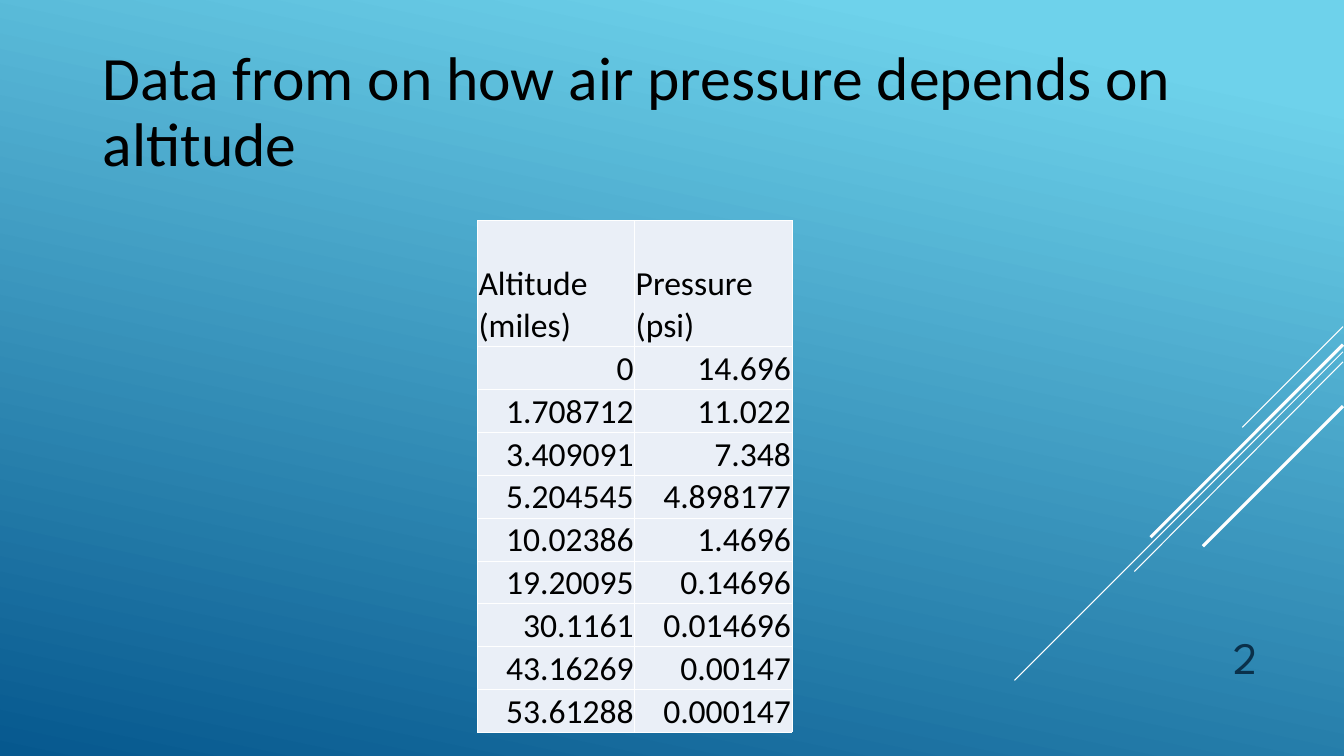
from lxml.etree import SubElement
from pptx import Presentation
from pptx.dml.color import RGBColor
from pptx.enum.shapes import MSO_CONNECTOR
from pptx.enum.text import MSO_ANCHOR, MSO_AUTO_SIZE, PP_ALIGN
from pptx.oxml.ns import qn
from pptx.util import Pt

PX = 9144  # 100 px to the inch
SKY = RGBColor(0x6E, 0xD2, 0xEB)
DEEP_BLUE = RGBColor(0x06, 0x58, 0x8E)
WHITE = RGBColor(0xFF, 0xFF, 0xFF)
BLACK = RGBColor(0x00, 0x00, 0x00)
CELL_BLUE = RGBColor(0xEA, 0xEF, 0xF7)
NAVY = RGBColor(0x0A, 0x30, 0x4A)


def format_text(p, font, size, color, align=PP_ALIGN.LEFT, spacing=None):
    p.alignment = align
    p.line_spacing = spacing
    for r in p.runs:
        r.font.name = font
        r.font.size = Pt(size)
        r.font.color.rgb = color


def add_border(tcPr, side):
    ln = SubElement(tcPr, qn(f"a:{side}"), w=str(Pt(0.45)))
    fill = SubElement(ln, qn("a:solidFill"))
    SubElement(fill, qn("a:srgbClr"), val=str(WHITE))


prs = Presentation()
prs.slide_width = 1334 * PX
prs.slide_height = 750 * PX
s = prs.slides.add_slide(prs.slide_layouts[5])

# Background gradient
fill = s.background.fill
fill.gradient()
fill.gradient_angle = 258
for stop, position, color in zip(fill.gradient_stops, (0.1, 1), (SKY, DEEP_BLUE)):
    stop.position = position
    stop.color.rgb = color

# Diagonal lines running in from the right edge
RIGHT = 1333
for y1, x2, y2, width in [
    (324, 1233, 424, 0.75),
    (349, 1007, 675, 0.75),
    (359, 1126, 567, 0.75),
    (342, 1142, 533, 2.25),
    (403, 1194, 542, 2.25),
]:
    line = s.shapes.add_connector(
        MSO_CONNECTOR.STRAIGHT, RIGHT * PX, y1 * PX, x2 * PX, y2 * PX)
    line.line.color.rgb = WHITE
    line.line.width = Pt(width)
    SubElement(line._element.spPr, qn("a:effectLst"))

# Title
title = s.shapes.title
title.left, title.top, title.width, title.height = (
    v * PX for v in (92, 40, 1150, 145))
tf = title.text_frame
tf.text = "Data from on how air pressure depends on altitude"
tf.word_wrap = True
tf.auto_size = MSO_AUTO_SIZE.NONE
tf.vertical_anchor = MSO_ANCHOR.MIDDLE
format_text(tf.paragraphs[0], "Calibri", 44, BLACK, spacing=0.9)

# Pressure table
ROWS = [
    ("Altitude (miles)", "Pressure (psi)"),
    ("0", "14.696"),
    ("1.708712", "11.022"),
    ("3.409091", "7.348"),
    ("5.204545", "4.898177"),
    ("10.02386", "1.4696"),
    ("19.20095", "0.14696"),
    ("30.1161", "0.014696"),
    ("43.16269", "0.00147"),
    ("53.61288", "0.000147"),
]
HEADER_H, ROW_H, COL_W = 125, 41, 156
table = s.shapes.add_table(
    len(ROWS), 2, 474 * PX, 219 * PX, 2 * COL_W * PX,
    (HEADER_H + ROW_H * (len(ROWS) - 1)) * PX).table
for column in table.columns:
    column.width = COL_W * PX
for i, values in enumerate(ROWS):
    table.rows[i].height = (ROW_H if i else HEADER_H) * PX
    for j, value in enumerate(values):
        cell = table.cell(i, j)
        cell.text = value
        cell.margin_left = cell.margin_right = cell.margin_top = PX
        cell.margin_bottom = 0
        cell.vertical_anchor = MSO_ANCHOR.BOTTOM
        for side in ("lnL", "lnR", "lnT", "lnB"):
            add_border(cell._tc.get_or_add_tcPr(), side)
        cell.fill.solid()
        cell.fill.fore_color.rgb = CELL_BLUE
        format_text(cell.text_frame.paragraphs[0], "Calibri", 24, BLACK,
                    PP_ALIGN.RIGHT if i else PP_ALIGN.LEFT, 1.02)

# Slide number
number = s.shapes.add_textbox(1133 * PX, 610 * PX, 125 * PX, 73 * PX)
tf = number.text_frame
tf.text = "2"
tf.word_wrap = True
tf.vertical_anchor = MSO_ANCHOR.BOTTOM
format_text(tf.paragraphs[0], "League Spartan", 32, NAVY, PP_ALIGN.RIGHT)

prs.save("out.pptx")
